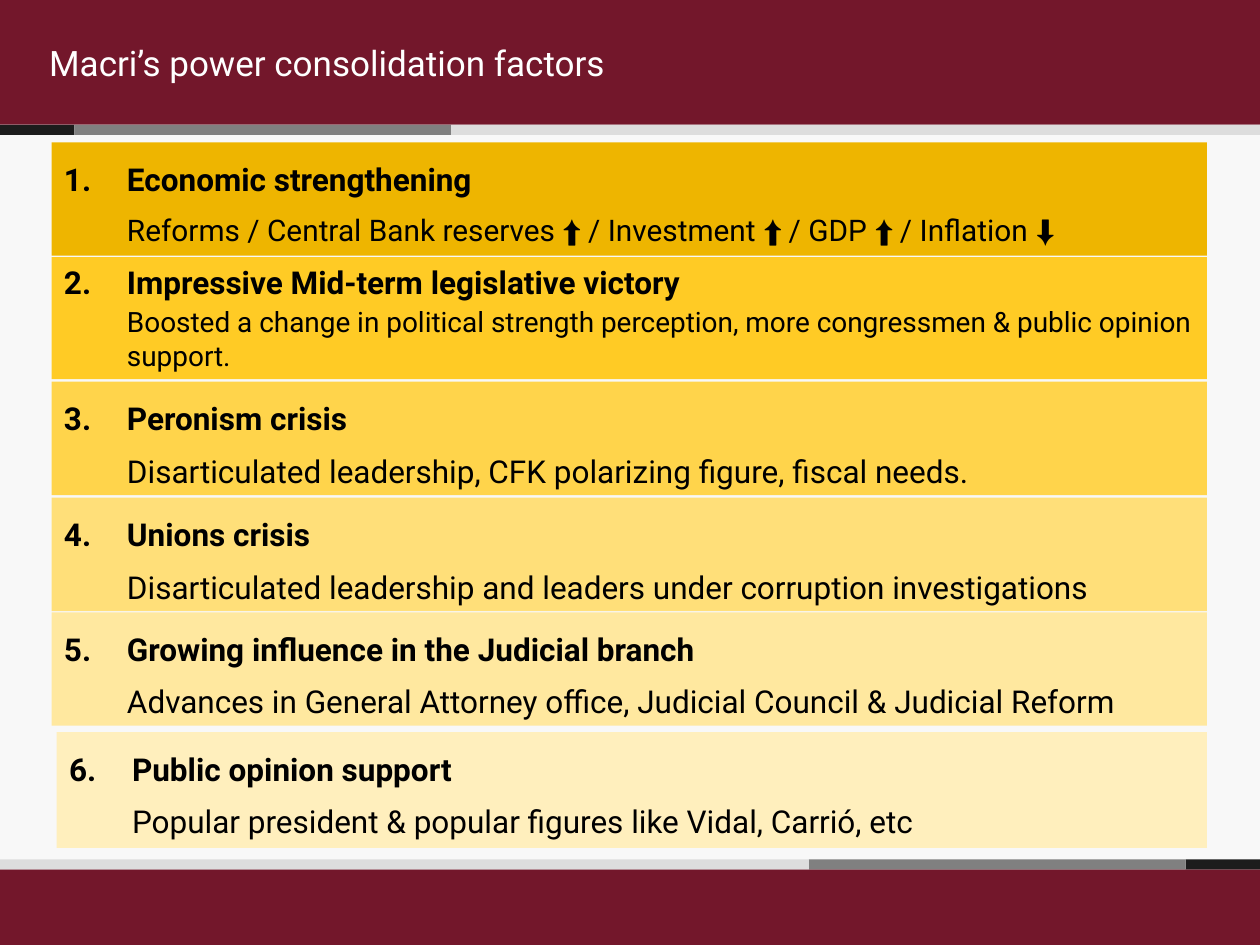
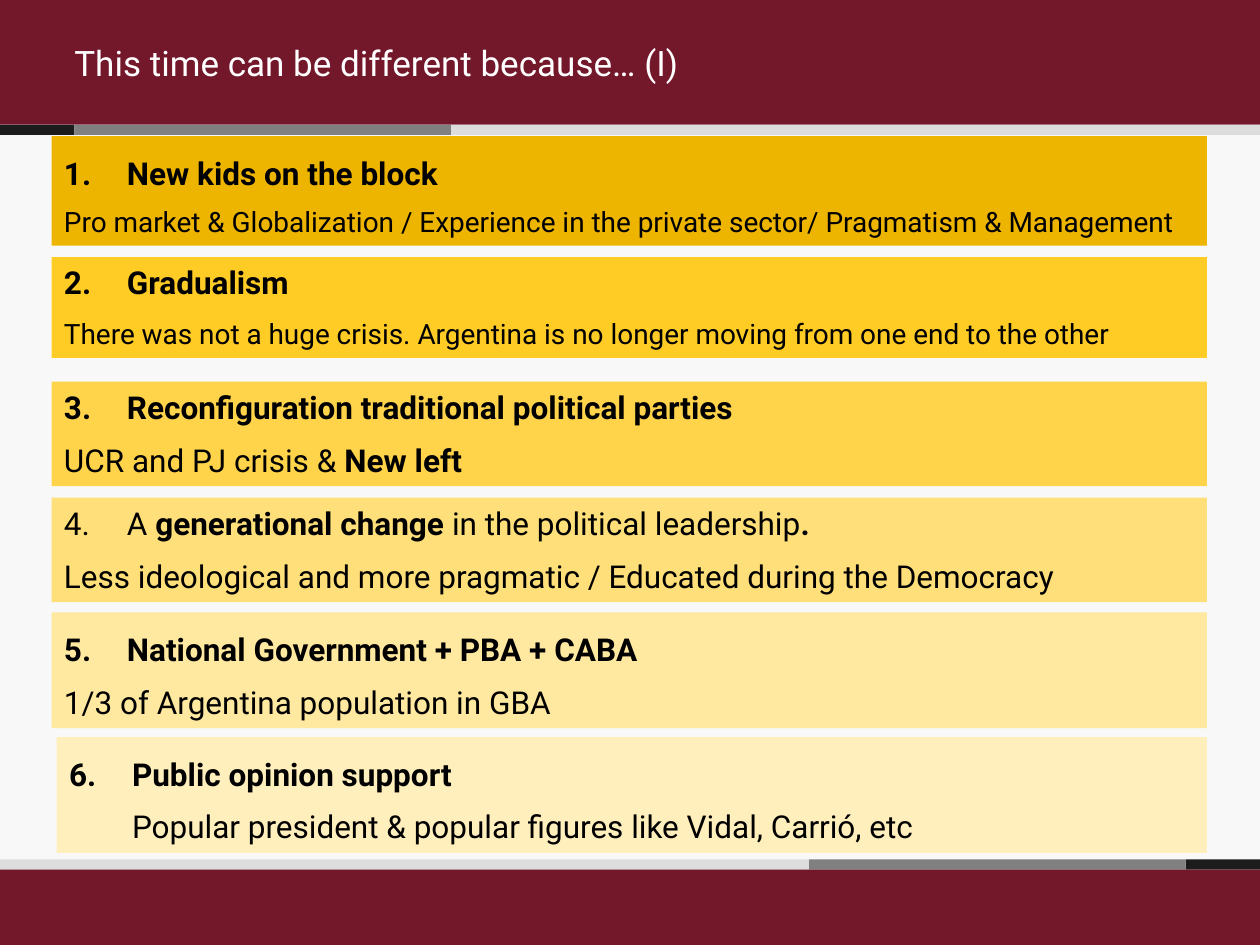
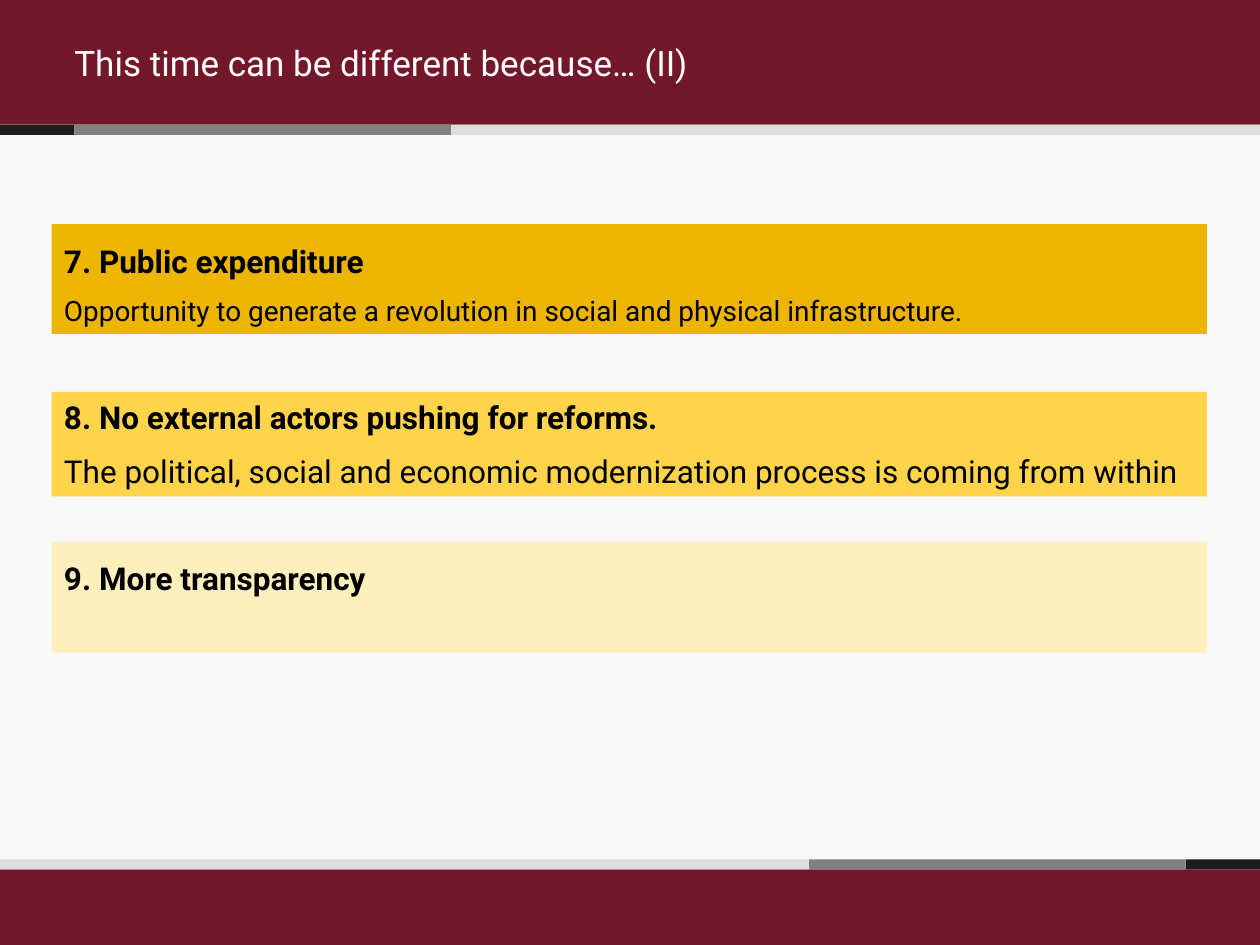
import pptx
import pptx.dml.color
import pptx.enum.shapes
import pptx.enum.text
import pptx.oxml.ns
import pptx.util
from lxml import etree

Inches = pptx.util.Inches
Pt = pptx.util.Pt
ALIGN = pptx.enum.text.PP_ALIGN
ANCHOR = pptx.enum.text.MSO_ANCHOR

# Shared style
COLOURS = {
    "page": "F8F8F8", "maroon": "73172B", "black": "1C1C1C",
    "grey": "808080", "silver": "DDDDDD", "white": "FFFFFF", "text": "000000",
    "gold1": "EEB500", "gold2": "FFCB25", "gold3": "FFD44B",
    "gold4": "FFDF79", "gold5": "FFE89F", "gold6": "FFEFBD",
}
FONT = "Roboto"
WIDTH, HEIGHT = 10, 7.5
HEADER, STRIPE, FOOTER = 0.99, 0.08, 0.6
STRIPE_PARTS = [("black", 0.59), ("grey", 2.99), ("silver", 6.42)]
BOX_LEFT, BOX_RIGHT = 0.41, 9.58
NUMBER_INDENT = 0.5

# Paragraph spacing
OPEN_HEAD = {"line_spacing": 1.3, "space_before": Pt(7), "space_after": Pt(2)}
OPEN = {"line_spacing": 1.3, "space_before": Pt(0), "space_after": Pt(2)}
TIGHT = {"line_spacing": 1.0, "space_before": Pt(7), "space_after": Pt(2)}
CLOSE = {"line_spacing": 1.0, "space_before": Pt(0), "space_after": Pt(2)}


class Builder:
    def __init__(self):
        self.deck = pptx.Presentation()
        self.deck.slide_width = Inches(WIDTH)
        self.deck.slide_height = Inches(HEIGHT)
        self.paint(self.deck.slide_master.background.fill, "page")
        self.slide = None

    def colour(self, name):
        return pptx.dml.color.RGBColor.from_string(COLOURS[name])

    def paint(self, fill, name):
        fill.solid()
        fill.fore_color.rgb = self.colour(name)

    def rectangle(self, left, top, width, height, colour):
        shape = self.slide.shapes.add_shape(
            pptx.enum.shapes.MSO_SHAPE.RECTANGLE,
            Inches(left), Inches(top), Inches(width), Inches(height))
        shape.shadow.inherit = False
        shape.line.fill.background()
        self.paint(shape.fill, colour)
        return shape

    def new_slide(self, title, indent):
        self.slide = self.deck.slides.add_slide(self.deck.slide_layouts[5])
        self.bands()
        self.title(title, indent)

    def bands(self):
        footer_top = HEIGHT - FOOTER
        self.rectangle(0, footer_top, WIDTH, FOOTER, "maroon")
        # The lower stripe mirrors the upper one
        left = 0
        for colour, width in STRIPE_PARTS:
            self.rectangle(left, HEADER, width, STRIPE, colour)
            self.rectangle(WIDTH - left - width, footer_top - STRIPE,
                           width, STRIPE, colour)
            left += width

    def title(self, text, indent):
        title = self.slide.shapes.title
        place = {"left": 0, "top": 0, "width": WIDTH, "height": HEADER}
        for name, value in place.items():
            setattr(title, name, Inches(value))
        self.paint(title.fill, "maroon")
        frame = title.text_frame
        frame.auto_size = pptx.enum.text.MSO_AUTO_SIZE.NONE
        frame.vertical_anchor = ANCHOR.MIDDLE
        para = frame.paragraphs[0]
        self.paragraph(para, text, 20, CLOSE, colour="white",
                       align=ALIGN.LEFT, indent=indent)

    def paragraph(self, para, text, size, spacing, bold=False, colour="text",
                  align=ALIGN.JUSTIFY, indent=0, number=None):
        """Fill a paragraph; text is a string or a list of (text, bold)."""
        for name, value in {**spacing, "alignment": align}.items():
            setattr(para, name, value)
        spans = [(text, bold)] if isinstance(text, str) else text
        for words, is_bold in spans:
            span = para.add_run()
            span.text = words
            style = {"name": FONT, "size": Pt(size), "bold": is_bold}
            for name, value in style.items():
                setattr(span.font, name, value)
            span.font.color.rgb = self.colour(colour)
        properties = para._p.get_or_add_pPr()
        properties.set("marL", str(Inches(indent)))
        properties.set("indent", str(-Inches(indent) if number else 0))
        if number:
            bullet = etree.SubElement(
                properties, pptx.oxml.ns.qn("a:buAutoNum"))
            bullet.set("type", "arabicPeriod")
            bullet.set("startAt", str(number))

    def factor(self, top, height, colour, head, detail=None, number=None,
               left=BOX_LEFT, head_spacing=OPEN_HEAD, detail_spacing=OPEN,
               detail_size=18, detail_indent=0, detail_align=ALIGN.JUSTIFY):
        box = self.rectangle(left, top, BOX_RIGHT - left, height, colour)
        frame = box.text_frame
        frame.word_wrap = True
        frame.vertical_anchor = ANCHOR.TOP
        self.paragraph(frame.paragraphs[0], head, 18, head_spacing, bold=True,
                       indent=NUMBER_INDENT if number else 0, number=number)
        if detail:
            self.paragraph(frame.add_paragraph(), detail, detail_size,
                           detail_spacing, align=detail_align,
                           indent=detail_indent)

    def public_opinion(self, top):
        self.factor(top, 0.92, "gold6", "Public opinion support",
                    "Popular president & popular figures like Vidal, Carrió, etc",
                    number=6, left=0.45, detail_indent=NUMBER_INDENT)


def consolidation_slide(builder):
    builder.new_slide("Macri’s power consolidation factors", 0.29)
    factors = [
        (1.13, 0.9, "Economic strengthening",
         "Reforms / Central Bank reserves ⬆ / Investment ⬆ / GDP ⬆ / Inflation ⬇",
         {"detail_size": 17, "detail_align": ALIGN.LEFT}),
        (2.04, 0.97, "Impressive Mid-term legislative victory",
         "Boosted a change in political strength perception, more congressmen "
         "& public opinion support.",
         {"head_spacing": TIGHT, "detail_spacing": CLOSE,
          "detail_size": 16, "detail_align": ALIGN.LEFT}),
        (3.03, 0.9, "Peronism crisis",
         "Disarticulated leadership, CFK polarizing figure, fiscal needs.", {}),
        (3.95, 0.9, "Unions crisis",
         "Disarticulated leadership and leaders under corruption investigations",
         {}),
        (4.86, 0.9, "Growing influence in the Judicial branch",
         "Advances in General Attorney office, Judicial Council & Judicial Reform",
         {}),
    ]
    for number, (top, height, head, detail, style) in enumerate(factors, 1):
        builder.factor(top, height, f"gold{number}", head, detail, number,
                       detail_indent=NUMBER_INDENT, **style)
    builder.public_opinion(5.81)


def difference_slide_one(builder):
    builder.new_slide("This time can be different because… (I)", 0.49)
    tight = {"head_spacing": TIGHT, "detail_spacing": TIGHT}
    reasons = [
        (1.08, 0.87, "New kids on the block",
         "Pro market & Globalization / Experience in the private sector/ "
         "Pragmatism & Management", {"detail_size": 16}),
        (2.04, 0.8, "Gradualism",
         "There was not a huge crisis. Argentina is no longer moving from "
         "one end to the other", {**tight, "detail_size": 16}),
        (3.03, 0.83, "Reconfiguration traditional political parties",
         [("UCR and PJ crisis & ", False), ("New left", True)], tight),
        (3.95, 0.83,
         [("A ", False), ("generational change ", True),
          ("in the political leadership", False), (".", True)],
         "Less ideological and more pragmatic / Educated during the Democracy",
         tight),
        (4.86, 0.92, "National Government + PBA + CABA",
         "1/3 of Argentina population in GBA", {"detail_spacing": TIGHT}),
    ]
    for number, (top, height, head, detail, style) in enumerate(reasons, 1):
        builder.factor(top, height, f"gold{number}", head, detail, number,
                       **style)
    builder.public_opinion(5.85)


def difference_slide_two(builder):
    builder.new_slide("This time can be different because… (II)", 0.49)
    builder.factor(
        1.78, 0.87, "gold1", "7. Public expenditure",
        "Opportunity to generate a revolution in social and physical "
        "infrastructure.", detail_size=16)
    builder.factor(
        3.11, 0.83, "gold3", "8. No external actors pushing for reforms.",
        "The political, social and economic modernization process is coming "
        "from within", head_spacing=TIGHT, detail_spacing=TIGHT)
    builder.factor(4.3, 0.88, "gold6", "9. More transparency")


def main():
    builder = Builder()
    consolidation_slide(builder)
    difference_slide_one(builder)
    difference_slide_two(builder)
    builder.deck.save("out.pptx")


if __name__ == "__main__":
    main()
